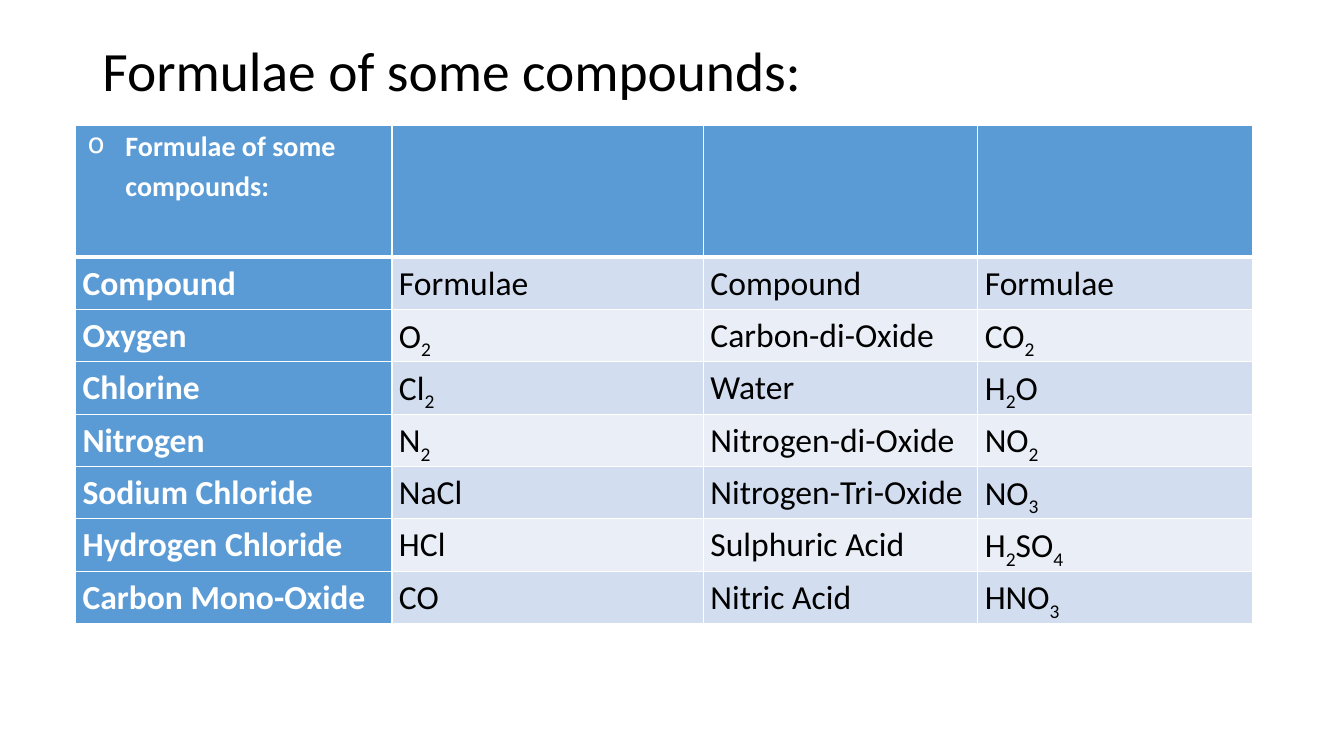
from itertools import groupby

from lxml import etree
from pptx import Presentation
from pptx.dml.color import RGBColor
from pptx.enum.text import MSO_ANCHOR, MSO_AUTO_SIZE, PP_ALIGN
from pptx.oxml.ns import qn
from pptx.util import Pt

MIDDLE = MSO_ANCHOR.MIDDLE
FIXED = MSO_AUTO_SIZE.NONE
LEFT = PP_ALIGN.LEFT
FONT = "Calibri"
HEX = {"blue": "5B9BD5", "dark": "D2DEEF", "light": "EAEFF7",
       "white": "FFFFFF", "black": "000000"}
TITLE = "Formulae of some compounds:"
ROWS = [
    [TITLE, "", "", ""],
    ["Compound", "Formulae", "Compound", "Formulae"],
    ["Oxygen", "O2", "Carbon-di-Oxide", "CO2"],
    ["Chlorine", "Cl2", "Water", "H2O"],
    ["Nitrogen", "N2", "Nitrogen-di-Oxide", "NO2"],
    ["Sodium Chloride", "NaCl", "Nitrogen-Tri-Oxide", "NO3"],
    ["Hydrogen Chloride", "HCl", "Sulphuric Acid", "H2SO4"],
    ["Carbon Mono-Oxide", "CO", "Nitric Acid", "HNO3"],
]
WIDTHS = [226, 222.5, 196, 196]
HEAD, BODY = 94.5, 37.2


def style(font, size, color, bold=False):
    font.name = FONT
    font.size = Pt(size)
    font.bold = bold
    font.color.rgb = RGBColor.from_string(HEX[color])


def edge(cell, side, width):
    props = cell._tc.get_or_add_tcPr()
    line = etree.SubElement(props, qn("a:ln" + side), w=str(Pt(width)))
    fill = etree.SubElement(line, qn("a:solidFill"))
    etree.SubElement(fill, qn("a:srgbClr"), val=HEX["white"])


deck = Presentation()
deck.slide_width, deck.slide_height = Pt(960), Pt(540)
slide = deck.slides.add_slide(deck.slide_layouts[5])

title = slide.shapes.title
title.left, title.top, title.width, title.height = Pt(66), Pt(29), Pt(828), Pt(47.5)
frame = title.text_frame
frame.text = TITLE
frame.auto_size = FIXED
frame.vertical_anchor = MIDDLE
para = frame.paragraphs[0]
para.alignment = LEFT
para.line_spacing = 0.9
style(para.runs[0].font, 39.6, "black")

table = slide.shapes.add_table(
    len(ROWS), len(WIDTHS), Pt(54), Pt(89.3),
    Pt(sum(WIDTHS)), Pt(HEAD + BODY * (len(ROWS) - 1))).table
for col, width in zip(table.columns, WIDTHS):
    col.width = Pt(width)

for r, row in enumerate(ROWS):
    table.rows[r].height = Pt(BODY if r else HEAD)
    for c, text in enumerate(row):
        cell = table.cell(r, c)
        for side in "LRTB":
            thick = (r, side) in [(0, "B"), (1, "T")]
            edge(cell, side, 3 if thick else 1)
        key = r == 0 or c == 0
        tint = "blue" if key else "dark" if r % 2 else "light"
        cell.fill.solid()
        cell.fill.fore_color.rgb = RGBColor.from_string(HEX[tint])
        cell.margin_left = cell.margin_right = Pt(5 if r else 8.6)
        cell.margin_top = cell.margin_bottom = 0
        para = cell.text_frame.paragraphs[0]
        para.line_spacing = 1.15
        for digit, chars in groupby(text, str.isdigit):
            run = para.add_run()
            run.text = "".join(chars)
            style(run.font, 24 if r else 20, "white" if key else "black", key)
            if digit:
                run._r.get_or_add_rPr().set("baseline", "-25000")

para = table.cell(0, 0).text_frame.paragraphs[0]
para.space_after = Pt(10)
props = para._p.get_or_add_pPr()
props.set("marL", str(Pt(27)))
props.set("indent", str(Pt(-27)))
etree.SubElement(props, qn("a:buChar"), char="o")

deck.save("out.pptx")
